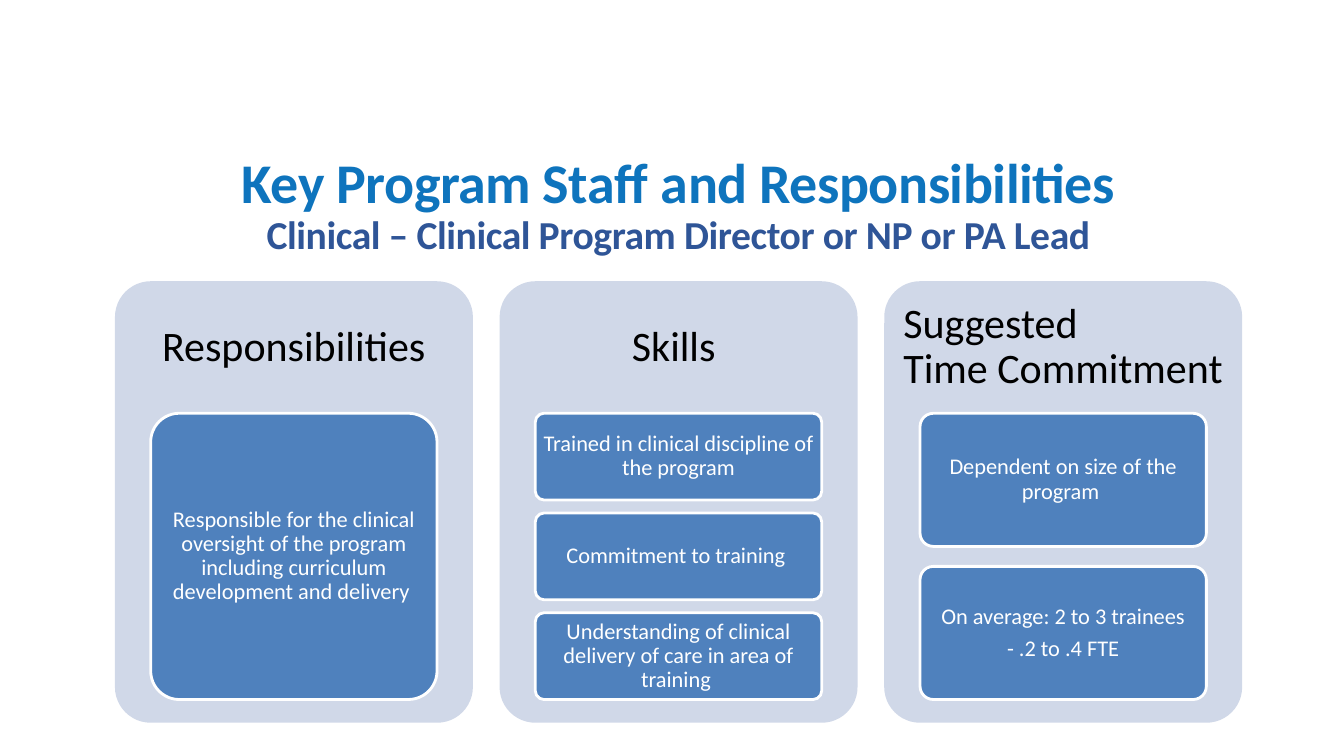
"""Builds the slide on key program staff and responsibilities."""
from pptx import Presentation
from pptx.dml.color import RGBColor
from pptx.enum.shapes import MSO_SHAPE
from pptx.enum.text import MSO_ANCHOR, MSO_AUTO_SIZE, PP_ALIGN
from pptx.util import Inches, Pt

FONT = "Calibri"
COLORS = {
    "title": "0E74BD",
    "subtitle": "2F5597",
    "panel": "D0D8E8",
    "card": "4F81BD",
    "white": "FFFFFF",
    "black": "000000",
}
FIRST_LEFT, LAST_LEFT = 1.14, 8.77
PANEL_TOP, PANEL_W, PANEL_H = 2.79, 3.55, 4.38
CARD_TOP, CARD_W, CARDS_H = 4.1, 2.84, 2.84
GAP_RATIO = 0.15
PANELS = [
    (["Responsibilities"], [
        ["Responsible for the clinical oversight of the program including "
         "curriculum development and delivery "],
    ]),
    (["Skills "], [
        ["Trained in clinical discipline of the program"],
        ["Commitment to training "],
        ["Understanding of clinical delivery of care in area of training "],
    ]),
    (["Suggested", "Time Commitment"], [
        ["Dependent on size of the program "],
        ["On average: 2 to 3 trainees", "- .2 to .4 FTE"],
    ]),
]


def rgb(name):
    """Return a named colour."""
    return RGBColor.from_string(COLORS[name])


def add_run(p, text, size, color, bold=False):
    """Add one formatted run to a paragraph."""
    r = p.add_run()
    r.text = text
    r.font.name = FONT
    r.font.size = Pt(size)
    r.font.bold = bold
    r.font.color.rgb = rgb(color)
    return r


def set_frame(tf, anchor, left, top, right, bottom):
    """Set wrapping, anchor and insets of a text frame."""
    tf.word_wrap = True
    tf.auto_size = MSO_AUTO_SIZE.NONE
    tf.vertical_anchor = anchor
    tf.margin_left, tf.margin_top = Inches(left), Inches(top)
    tf.margin_right, tf.margin_bottom = Inches(right), Inches(bottom)


def add_title(s):
    """Place the title and its subtitle line in the title placeholder."""
    sp = s.shapes.title
    sp.left, sp.top = Inches(0.73), Inches(1.49)
    sp.width, sp.height = Inches(12), Inches(1.12)
    set_frame(sp.text_frame, MSO_ANCHOR.TOP, 0.1, 0.05, 0.1, 0.05)
    p = sp.text_frame.paragraphs[0]
    p.alignment = PP_ALIGN.CENTER
    p.line_spacing = 0.9
    runs = [add_run(p, "Key Program Staff and Responsibilities", 40, "title", True)]
    p.add_line_break()
    runs.append(add_run(p, "Clinical – Clinical Program Director or NP or PA Lead",
                        28.3, "subtitle", True))
    for r in runs:
        r.font._element.set("spc", "-30")


def add_box(s, left, top, width, height, fill):
    """Add a rounded box without shadow or line."""
    sp = s.shapes.add_shape(MSO_SHAPE.ROUNDED_RECTANGLE, Inches(left), Inches(top),
                            Inches(width), Inches(height))
    sp.adjustments[0] = 0.1
    sp.shadow.inherit = False
    sp.fill.solid()
    sp.fill.fore_color.rgb = rgb(fill)
    sp.line.fill.background()
    return sp


def add_heading(s, left, lines):
    """Add a panel heading, left aligned when it has several lines."""
    sp = s.shapes.add_textbox(Inches(left + 0.04), Inches(2.83),
                              Inches(3.47), Inches(1.24))
    tf = sp.text_frame
    several = len(lines) > 1
    side = (0.15, 0.05) if several else (0.12, 0.12)
    set_frame(tf, MSO_ANCHOR.MIDDLE, side[0], 0.12, side[1], 0.12)
    p = tf.paragraphs[0]
    p.alignment = PP_ALIGN.LEFT if several else PP_ALIGN.CENTER
    p.line_spacing = 0.9
    for i, line in enumerate(lines):
        if i:
            p.add_line_break()
        add_run(p, line, 30, "black")


def add_card(s, left, top, height, lines):
    """Add a blue card with centred white text."""
    sp = add_box(s, left, top, CARD_W, height, "card")
    sp.line.color.rgb = rgb("white")
    sp.line.width = Pt(2)
    tf = sp.text_frame
    set_frame(tf, MSO_ANCHOR.MIDDLE, 0.04, 0.03, 0.04, 0.03)
    for i, line in enumerate(lines):
        p = tf.add_paragraph() if i else tf.paragraphs[0]
        p.alignment = PP_ALIGN.CENTER
        p.line_spacing = 0.9
        p.space_before = Pt(5.6 if i else 0)
        add_run(p, line, 16, "white")


def add_panel(s, left, heading, cards):
    """Add a panel with its heading and evenly stacked cards."""
    add_box(s, left, PANEL_TOP, PANEL_W, PANEL_H, "panel")
    add_heading(s, left, heading)
    height = CARDS_H / (len(cards) + (len(cards) - 1) * GAP_RATIO)
    pitch = height * (1 + GAP_RATIO)
    for i, lines in enumerate(cards):
        add_card(s, left + (PANEL_W - CARD_W) / 2, CARD_TOP + i * pitch, height, lines)


def main():
    """Build and save the slide."""
    prs = Presentation()
    prs.slide_width, prs.slide_height = Inches(13.33), Inches(7.5)
    s = prs.slides.add_slide(prs.slide_layouts[5])
    add_title(s)
    step = (LAST_LEFT - FIRST_LEFT) / (len(PANELS) - 1)
    for i, (heading, cards) in enumerate(PANELS):
        add_panel(s, FIRST_LEFT + i * step, heading, cards)
    prs.save("out.pptx")


if __name__ == "__main__":
    main()
